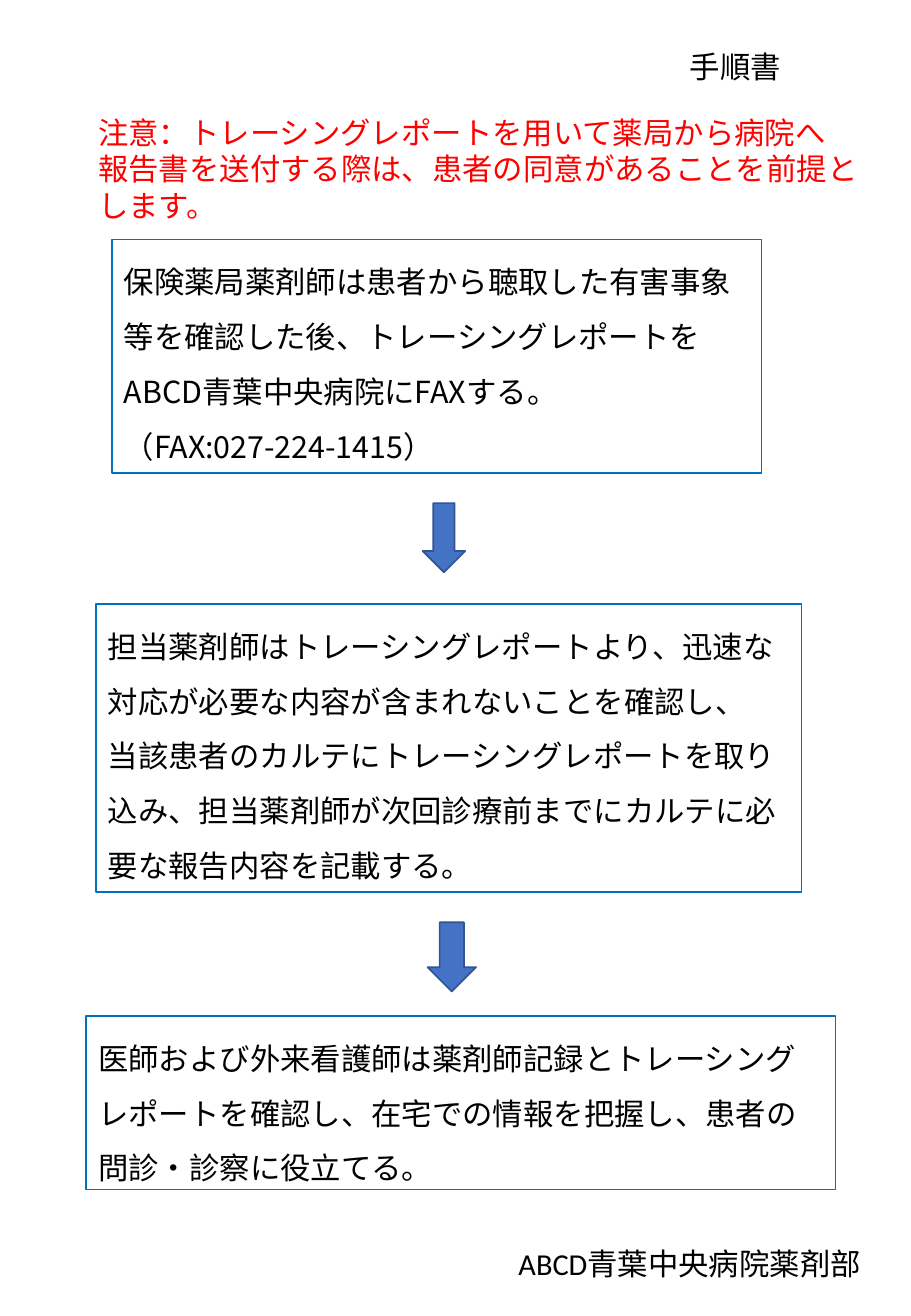
"""Builds the one-page procedure sheet for sending tracing reports."""
from dataclasses import dataclass

from lxml import etree
from pptx import Presentation
from pptx.dml.color import RGBColor
from pptx.enum.shapes import MSO_SHAPE
from pptx.enum.text import MSO_ANCHOR, MSO_AUTO_SIZE, PP_ALIGN
from pptx.oxml.ns import qn
from pptx.util import Inches, Pt

RECT, DOWN_ARROW = MSO_SHAPE.RECTANGLE, MSO_SHAPE.DOWN_ARROW
TOP, NO_FIT = MSO_ANCHOR.TOP, MSO_AUTO_SIZE.NONE
LEFT, CENTER = PP_ALIGN.LEFT, PP_ALIGN.CENTER
WIDTH, HEIGHT = Inches(7.5), Inches(10.83)
JAPANESE, LATIN = "Noto Sans CJK JP", "Calibri"
BLACK, RED = "000000", "FF0000"
BOX_LINE, ARROW_FILL, ARROW_LINE = "0070C0", "4472C4", "325491"
SIZE = 18
SINGLE = 1.2 * SIZE
WIDE = 1.5 * SINGLE


@dataclass(frozen=True)
class Area:
    """Position and size in percent of the slide."""
    left: float
    top: float
    width: float
    height: float

    def emu(self) -> tuple[int, int, int, int]:
        """Return left, top, width and height as lengths."""
        return (int(WIDTH * self.left / 100), int(HEIGHT * self.top / 100),
                int(WIDTH * self.width / 100), int(HEIGHT * self.height / 100))


@dataclass(frozen=True)
class Step:
    """One framed step of the procedure."""
    area: Area
    text: str


STEPS = [
    Step(Area(12.27, 18.19, 71.33, 17.73),
         "保険薬局薬剤師は患者から聴取した有害事象等を確認した後、トレーシングレポートを"
         "ABCD青葉中央病院にFAXする。\n（FAX:027-224-1415）"),
    Step(Area(10.53, 45.89, 77.47, 21.88),
         "担当薬剤師はトレーシングレポートより、迅速な対応が必要な内容が含まれないことを確認し、\n"
         "当該患者のカルテにトレーシングレポートを取り込み、"
         "担当薬剤師が次回診療前までにカルテに必要な報告内容を記載する。"),
    Step(Area(9.47, 77.19, 82.27, 13.2),
         "医師および外来看護師は薬剤師記録とトレーシングレポートを確認し、"
         "在宅での情報を把握し、患者の問診・診察に役立てる。"),
]
ARROWS = [Area(46.4, 38.23, 4.67, 5.26), Area(46.93, 70.08, 5.33, 5.26)]
TITLE_AREA = Area(65.6, 3.23, 30.27, 3.69)
NOTICE_AREA = Area(9.47, 8.22, 87.47, 9.33)
FOOTER_AREA = Area(55.6, 94.18, 42.4, 3.69)
NOTICE = ("注意：トレーシングレポートを用いて薬局から病院へ\n"
          "報告書を送付する際は、患者の同意があることを前提とします。")


def rgb(value: str) -> RGBColor:
    """Turn a hex string into a colour."""
    return RGBColor.from_string(value)


def write(sp, text: str, color: str = BLACK, spacing: float = SINGLE,
          font: str = JAPANESE, align: PP_ALIGN = LEFT) -> None:
    """Set and format the text of a shape."""
    tf = sp.text_frame
    tf.text = text
    tf.word_wrap = True
    tf.auto_size = NO_FIT
    tf.vertical_anchor = TOP
    for p in tf.paragraphs:
        p.alignment = align
        p.line_spacing = Pt(spacing)
        for r in p.runs:
            r.font.size = Pt(SIZE)
            r.font.color.rgb = rgb(color)
            r.font.name = font
            etree.SubElement(r.font._element, qn("a:ea"), typeface=JAPANESE)


def add_title(slide, area: Area, text: str) -> None:
    """Move and fill the title placeholder."""
    sp = slide.shapes.title
    sp.left, sp.top, sp.width, sp.height = area.emu()
    write(sp, text, align=CENTER)


def add_label(slide, area: Area, text: str, color: str = BLACK,
              font: str = JAPANESE) -> None:
    """Add a plain text box."""
    write(slide.shapes.add_textbox(*area.emu()), text, color, font=font)


def add_outlined(slide, kind: MSO_SHAPE, area: Area, line: str):
    """Add a preset shape with a thin outline and no shadow."""
    sp = slide.shapes.add_shape(kind, *area.emu())
    sp.shadow.inherit = False
    sp.line.color.rgb = rgb(line)
    sp.line.width = Pt(1)
    return sp


def add_step(slide, step: Step) -> None:
    """Add a framed step."""
    sp = add_outlined(slide, RECT, step.area, BOX_LINE)
    sp.fill.background()
    write(sp, step.text, spacing=WIDE)


def add_arrow(slide, area: Area) -> None:
    """Add a block arrow between two steps."""
    sp = add_outlined(slide, DOWN_ARROW, area, ARROW_LINE)
    sp.fill.solid()
    sp.fill.fore_color.rgb = rgb(ARROW_FILL)


def main() -> None:
    """Build and save the slide."""
    prs = Presentation()
    prs.slide_width, prs.slide_height = WIDTH, HEIGHT
    slide = prs.slides.add_slide(prs.slide_layouts.get_by_name("Title Only"))
    add_title(slide, TITLE_AREA, "手順書")
    add_label(slide, NOTICE_AREA, NOTICE, RED)
    for step in STEPS:
        add_step(slide, step)
    for area in ARROWS:
        add_arrow(slide, area)
    add_label(slide, FOOTER_AREA, "ABCD青葉中央病院薬剤部", font=LATIN)
    prs.save("out.pptx")


if __name__ == "__main__":
    main()
